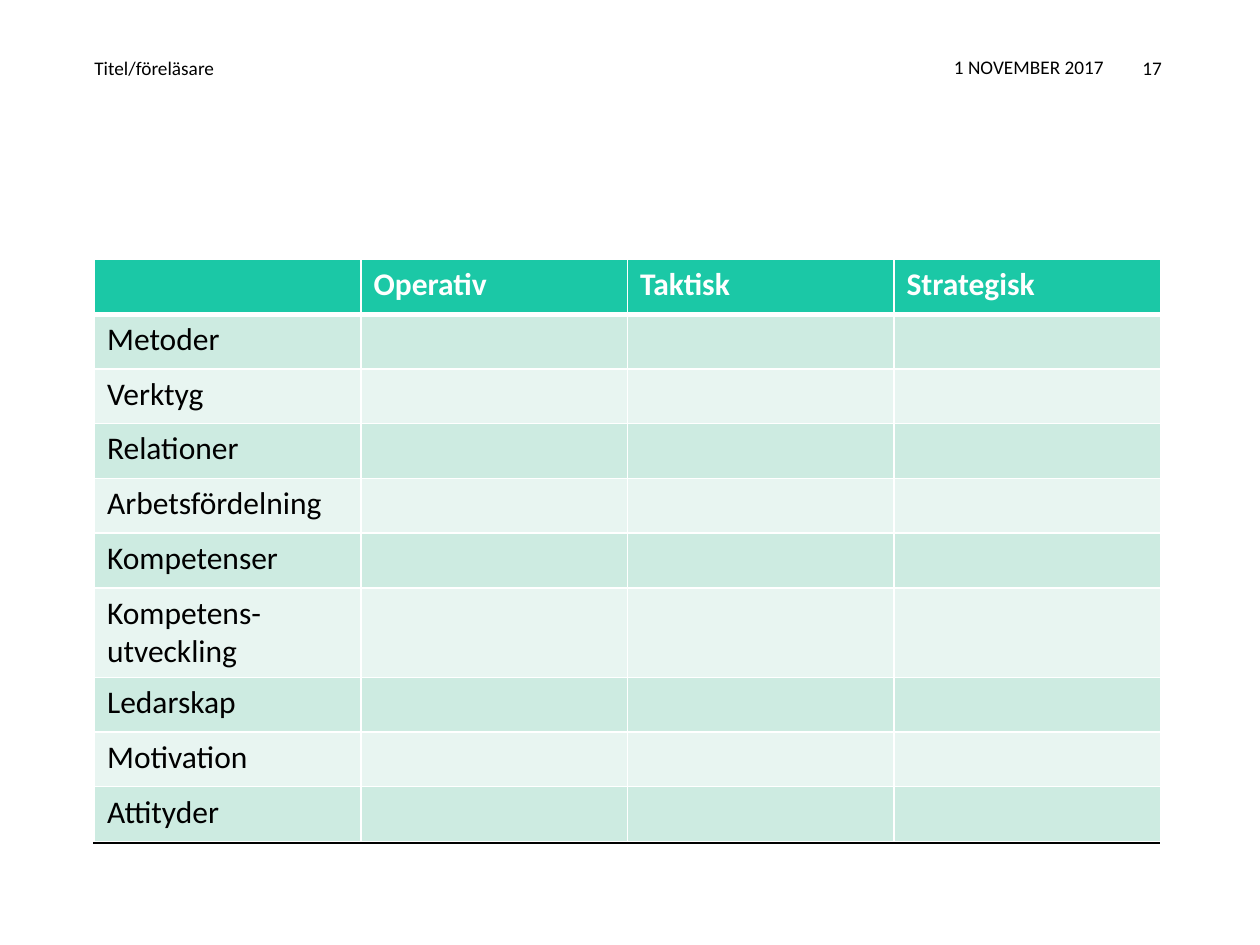
from lxml.etree import SubElement
from pptx import Presentation
from pptx.dml.color import RGBColor
from pptx.enum.shapes import MSO_CONNECTOR
from pptx.enum.text import MSO_ANCHOR as ANCHOR, PP_ALIGN as ALIGN
from pptx.oxml.ns import qn
from pptx.util import Inches, Pt

BLACK, WHITE = "000000", "FFFFFF"
HEADER_FILL = "1BC8A6"
BAND_FILLS = ("CDEBE1", "E8F5F1")

# text, (left, top, width, height), alignment, anchor
PAGE_HEADER = [
    ("1 NOVEMBER 2017", (7.29, 0.39, 1.57, 0.29), ALIGN.RIGHT, ANCHOR.TOP),
    ("17", (8.71, 0.4, 0.61, 0.29), ALIGN.RIGHT, ANCHOR.TOP),
    ("Titel/föreläsare", (0.65, 0.39, 6.38, 0.29), ALIGN.LEFT, ANCHOR.BOTTOM),
]
LEVELS = ["", "Operativ", "Taktisk", "Strategisk"]
TOPICS = ["Metoder", "Verktyg", "Relationer", "Arbetsfördelning", "Kompetenser",
          "Kompetens-utveckling", "Ledarskap", "Motivation", "Attityder"]
TWO_LINE_TOPIC = "Kompetens-utveckling"

TABLE_LEFT, TABLE_TOP, TABLE_WIDTH, TABLE_HEIGHT = 0.75, 2.06, 8.46, 4.62
TALL_ROW = 0.71


def rgb(color):
    return RGBColor.from_string(color)


def write(frame, text, size=18, color=BLACK, bold=False, align=ALIGN.LEFT):
    paragraph = frame.paragraphs[0]
    paragraph.alignment = align
    run = paragraph.add_run()
    run.text = text
    font = run.font
    font.name, font.size, font.bold = "Calibri", Pt(size), bold
    font.color.rgb = rgb(color)


def set_borders(cell, bottom=1, top=1):
    """Draw white borders, which must come before the fill in the cell's XML."""
    properties = cell._tc.get_or_add_tcPr()
    for side, width in (("L", 1), ("R", 1), ("T", top), ("B", bottom)):
        border = SubElement(properties, qn(f"a:ln{side}"), w=str(Pt(width)))
        fill = SubElement(border, qn("a:solidFill"))
        SubElement(fill, qn("a:srgbClr"), val=WHITE)


def add_footer_line(slide):
    line = slide.shapes.add_connector(
        MSO_CONNECTOR.STRAIGHT, Inches(0.74), Inches(6.69), Inches(9.21), Inches(6.69))
    line.line.color.rgb = rgb(BLACK)
    line.line.width = Pt(0.75)
    SubElement(line._element.spPr, qn("a:effectLst"))


def add_page_header(slide):
    for text, place, align, anchor in PAGE_HEADER:
        frame = slide.shapes.add_textbox(*map(Inches, place)).text_frame
        frame.word_wrap = True
        frame.vertical_anchor = anchor
        write(frame, text, size=11, align=align)


def add_topic_table(slide):
    rows = [LEVELS] + [[topic] + [""] * (len(LEVELS) - 1) for topic in TOPICS]
    table = slide.shapes.add_table(
        len(rows), len(LEVELS), Inches(TABLE_LEFT), Inches(TABLE_TOP),
        Inches(TABLE_WIDTH), Inches(TABLE_HEIGHT)).table
    plain_row = (TABLE_HEIGHT - TALL_ROW) / (len(rows) - 1)
    for column in table.columns:
        column.width = Inches(TABLE_WIDTH / len(LEVELS))
    for r, texts in enumerate(rows):
        is_header = r == 0
        table.rows[r].height = Inches(TALL_ROW if texts[0] == TWO_LINE_TOPIC else plain_row)
        for c, text in enumerate(texts):
            cell = table.cell(r, c)
            set_borders(cell, bottom=3 if is_header else 1, top=3 if r == 1 else 1)
            cell.fill.solid()
            cell.fill.fore_color.rgb = rgb(HEADER_FILL if is_header else BAND_FILLS[(r - 1) % 2])
            if text:
                write(cell.text_frame, text, color=WHITE if is_header else BLACK, bold=is_header)


def main():
    presentation = Presentation()
    presentation.slide_width, presentation.slide_height = Inches(10), Inches(7.5)
    slide = presentation.slides.add_slide(presentation.slide_layouts[6])
    add_footer_line(slide)
    add_page_header(slide)
    add_topic_table(slide)
    presentation.save("out.pptx")


if __name__ == "__main__":
    main()
